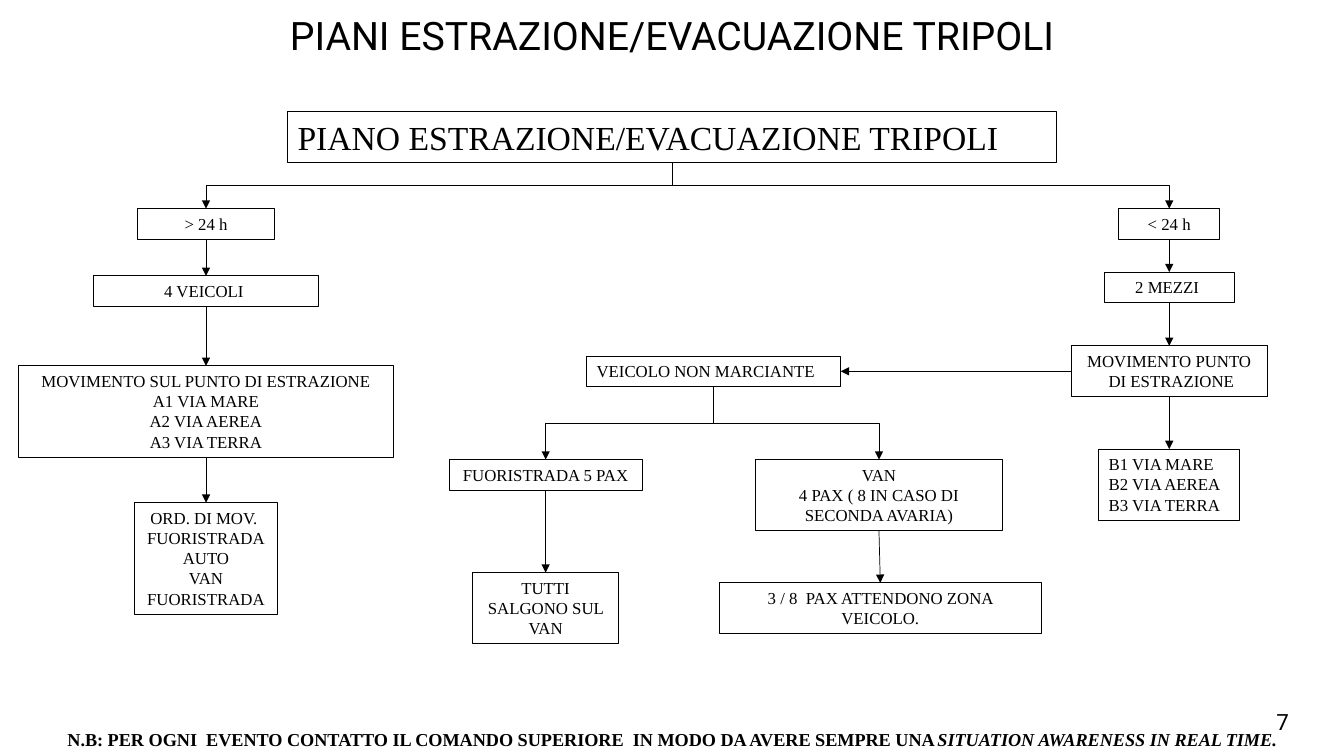
from pptx import Presentation
from pptx.dml.color import RGBColor
from pptx.enum.shapes import MSO_CONNECTOR, MSO_SHAPE
from pptx.enum.text import MSO_ANCHOR, PP_ALIGN
from pptx.oxml import parse_xml
from pptx.oxml.ns import nsdecls
from pptx.util import Inches, Pt

RECTANGLE = MSO_SHAPE.RECTANGLE
STRAIGHT, ELBOW = MSO_CONNECTOR.STRAIGHT, MSO_CONNECTOR.ELBOW
LEFT, CENTER = PP_ALIGN.LEFT, PP_ALIGN.CENTER
TOP, MIDDLE = MSO_ANCHOR.TOP, MSO_ANCHOR.MIDDLE
SIDE_TOP, SIDE_LEFT, SIDE_BOTTOM, SIDE_RIGHT = range(4)

COLORS = {"ink": "000000"}
SANS, SERIF = "Roboto", "Times New Roman"
BOX_FONT = {"name": SERIF, "size": Pt(12)}
HEADING_FONT = {"name": SERIF, "size": Pt(24)}
TITLE_FONT = {"name": SANS, "size": Pt(28), "bold": False}
NUMBER_FONT = {"name": SANS, "size": Pt(16)}
NOTE_FONT = {"name": SERIF, "size": Pt(13), "bold": True}


def apply(target, values):
    for name, value in values.items():
        setattr(target, name, value)


class FlowSlide:
    """A slide on a grid of 100 columns by 100 rows."""

    def __init__(self, deck):
        self.column = deck.slide_width / 100
        self.row = deck.slide_height / 100
        self.slide = deck.slides.add_slide(deck.slide_layouts[5])
        self.shapes = self.slide.shapes

    def area(self, left, top, width, height):
        return (round(left * self.column), round(top * self.row),
                round(width * self.column), round(height * self.row))

    def set_lines(self, shape, lines, font, align=CENTER, anchor=TOP):
        """Each line is a list of (text, extra font values) spans."""
        frame = shape.text_frame
        apply(frame, {"word_wrap": True, "vertical_anchor": anchor})
        for index, spans in enumerate(lines):
            para = frame.add_paragraph() if index else frame.paragraphs[0]
            para.alignment = align
            for text, extra in spans:
                span = para.add_run()
                span.text = text
                apply(span.font, {**font, **extra})
                span.font.color.rgb = RGBColor.from_string(COLORS["ink"])

    def title(self, text, area):
        title = self.shapes.title
        apply(title, dict(zip(("left", "top", "width", "height"), self.area(*area))))
        self.set_lines(title, [[(text, {})]], TITLE_FONT, anchor=MIDDLE)
        title.text_frame.paragraphs[0].line_spacing = 0.8

    def text(self, spans, area, font):
        self.set_lines(self.shapes.add_textbox(*self.area(*area)), [spans], font)

    def box(self, center, top, width, text, rows=1, align=CENTER, font=BOX_FONT):
        """A box centred on a column, as tall as its rows of text."""
        area = self.area(center - width / 2, top, width, 1.33 + 2.7 * rows)
        box = self.shapes.add_shape(RECTANGLE, *area)
        box.shadow.inherit = False
        box.fill.background()
        box.line.color.rgb = RGBColor.from_string(COLORS["ink"])
        box.line.width = Pt(0.75)
        self.set_lines(box, [[(line, {})] for line in text.split("\n")], font, align)
        return box

    def arrow(self, start, end, kind=STRAIGHT, sides=(SIDE_BOTTOM, SIDE_TOP)):
        link = self.shapes.add_connector(kind, 0, 0, 0, 0)
        link.begin_connect(start, sides[0])
        link.end_connect(end, sides[1])
        link.line.color.rgb = RGBColor.from_string(COLORS["ink"])
        link.line.width = Pt(0.5)
        properties = link._element.spPr
        properties.find("{*}ln").append(
            parse_xml(f'<a:tailEnd {nsdecls("a")} type="triangle"/>'))
        properties.append(parse_xml(f'<a:effectLst {nsdecls("a")}/>'))
        if kind == ELBOW:
            self.turn(link)

    def turn(self, link):
        """Rotate an elbow so that it leaves and arrives vertically."""
        across, down = link.end_x - link.begin_x, link.end_y - link.begin_y
        middle_x = (link.begin_x + link.end_x) // 2
        middle_y = (link.begin_y + link.end_y) // 2
        frame = link._element.spPr.find("{*}xfrm")
        for name in ("flipH", "flipV"):
            frame.attrib.pop(name, None)
        apply(link, {"left": middle_x - down // 2, "top": middle_y - abs(across) // 2,
                     "width": down, "height": abs(across)})
        frame.set("rot", "16200000" if across > 0 else "5400000")
        if across > 0:
            frame.set("flipH", "1")


def main():
    deck = Presentation()
    deck.slide_width, deck.slide_height = Inches(13.33), Inches(7.5)
    page = FlowSlide(deck)

    # Title, page number and note
    page.title("PIANI ESTRAZIONE/EVACUAZIONE TRIPOLI", (6.83, 2, 86.33, 6.4))
    page.text([("7", {})], (92.5, 93.07, 5.85, 5.33), NUMBER_FONT)
    page.text([("N.B: PER OGNI  EVENTO CONTATTO IL COMANDO SUPERIORE  IN MODO DA AVERE "
                "SEMPRE UNA ", {}),
               ("SITUATION AWARENESS IN REAL TIME.", {"italic": True})],
              (0, 95.73, 100, 4.27), NOTE_FONT)

    # Centre columns of the branches
    over, under, breakdown, suv, van = 15.33, 87, 53.1, 40.6, 65.4

    heading = page.box(50, 14.8, 57.2, "PIANO ESTRAZIONE/EVACUAZIONE TRIPOLI",
                       2, LEFT, HEADING_FONT)

    # Branch over 24 hours
    over_chain = [
        page.box(over, 27.6, 10.13, "> 24 h"),
        page.box(over, 36.5, 16.8, "4 VEICOLI "),
        page.box(over, 48.4, 27.9, "MOVIMENTO SUL PUNTO DI ESTRAZIONE\nA1 VIA MARE\n"
                 "A2 VIA AEREA\nA3 VIA TERRA", 4),
        page.box(over, 66.5, 10.68, "ORD. DI MOV. \nFUORISTRADA\nAUTO\nVAN\nFUORISTRADA", 5),
    ]

    # Branch under 24 hours
    under_chain = [
        page.box(under, 27.6, 7.55, "< 24 h"),
        page.box(under, 36, 9.7, "2 MEZZI "),
        page.box(under, 45.75, 14.6, "MOVIMENTO PUNTO\n DI ESTRAZIONE", 2),
        page.box(under, 59.4, 10.5, "B1 VIA MARE\nB2 VIA AEREA\nB3 VIA TERRA", 3, LEFT),
    ]

    # Vehicle breakdown
    stopped = page.box(breakdown, 47.1, 18.9, "VEICOLO NON MARCIANTE", align=LEFT)
    suv_chain = [
        page.box(suv, 60.8, 14.35, "FUORISTRADA 5 PAX"),
        page.box(suv, 75.75, 10.85, "TUTTI SALGONO SUL VAN", 3),
    ]
    van_chain = [
        page.box(van, 60.8, 18.4, "VAN\n4 PAX ( 8 IN CASO DI SECONDA AVARIA)", 3),
        page.box(van + 0.1, 77.1, 23.95, "3 / 8  PAX ATTENDONO ZONA VEICOLO.", 2),
    ]

    # Arrows
    for chain in (over_chain, under_chain, suv_chain, van_chain):
        for start, end in zip(chain, chain[1:]):
            page.arrow(start, end)
    for start, branches in ((heading, (over_chain, under_chain)),
                            (stopped, (suv_chain, van_chain))):
        for branch in branches:
            page.arrow(start, branch[0], ELBOW)
    page.arrow(under_chain[2], stopped, sides=(SIDE_LEFT, SIDE_RIGHT))

    deck.save("out.pptx")


if __name__ == "__main__":
    main()
